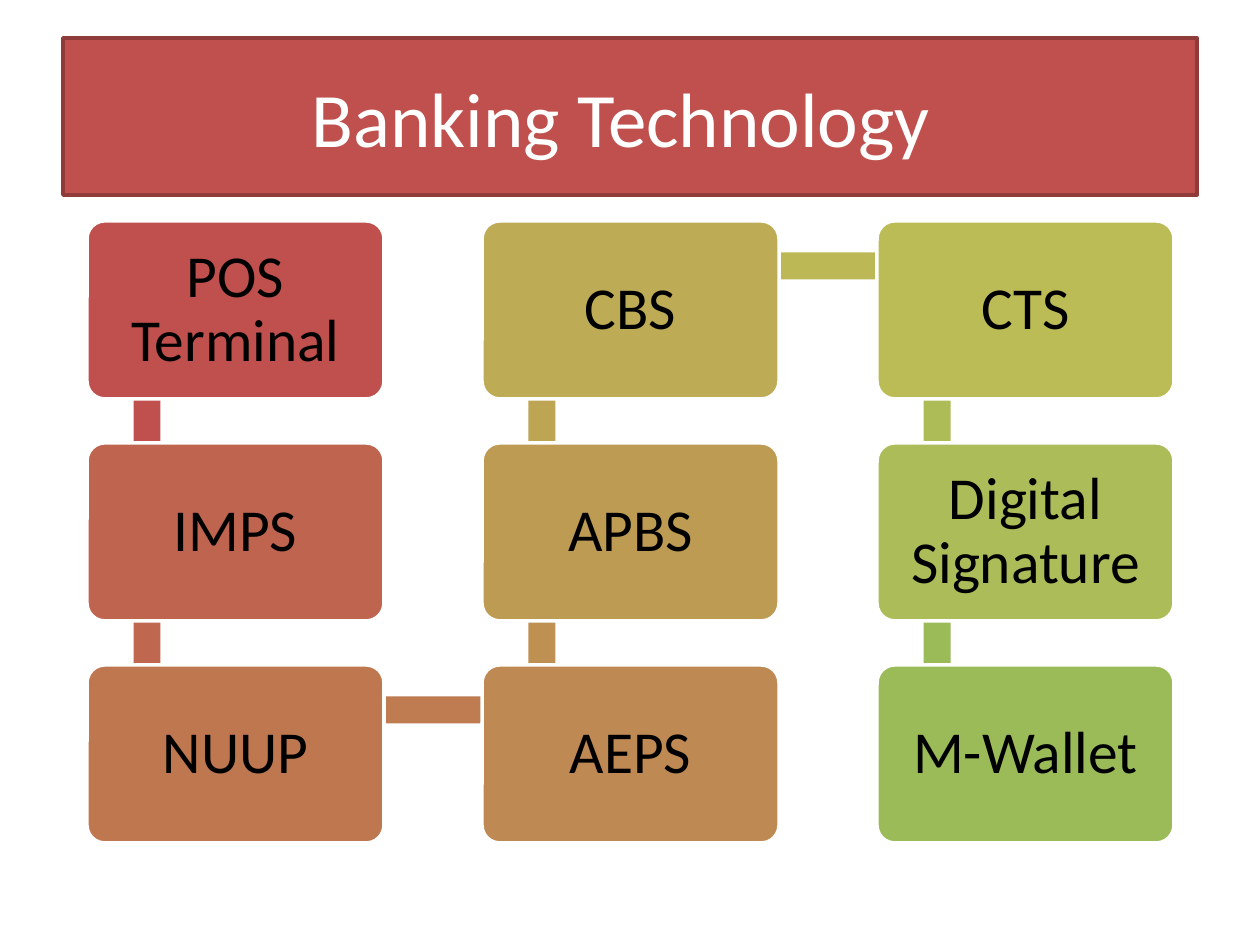
import math

import pptx
import pptx.dml.color
import pptx.enum.shapes
import pptx.enum.text
import pptx.util

EMU_PER_PX = 914400 / 126
FONT = "Calibri"
CARD_LEFT, CARD_TOP = 87, 221
CARD_WIDTH, CARD_HEIGHT = 297, 178
COLUMN_STEP, ROW_STEP = 395, 222
ANCHOR_X, ANCHOR_Y = 60, 45
LINK_THICKNESS = 27
CARD_MARGIN = 18

CARDS = [
    ("POS Terminal", 0, 0, "C0504D", "C0504D"),
    ("IMPS", 0, 1, "BF644F", "BF674F"),
    ("NUUP", 0, 2, "BF7750", "BF7C50"),
    ("AEPS", 1, 2, "BE8952", "BE9152"),
    ("APBS", 1, 1, "BD9B53", "BDA554"),
    ("CBS", 1, 0, "BDAC55", "BCB856"),
    ("CTS", 2, 0, "BCBC56", "AEBC57"),
    ("Digital Signature", 2, 1, "ABBC58", "9BBB59"),
    ("M-Wallet", 2, 2, "9BBB59", None),
]


def px(value):
    return pptx.util.Emu(round(value * EMU_PER_PX))


def color(value):
    return pptx.dml.color.RGBColor.from_string(value)


def add_box(slide, kind, left, top, width, height, fill, line=None):
    shape = slide.shapes.add_shape(kind, px(left), px(top), px(width), px(height))
    shape.shadow.inherit = False
    shape.fill.solid()
    shape.fill.fore_color.rgb = color(fill)
    if line:
        shape.line.color.rgb = color(line)
        shape.line.width = pptx.util.Pt(2)
    else:
        shape.line.fill.background()
    return shape


def write_text(shape, text, size, text_color, spacing=1.0):
    frame = shape.text_frame
    frame.word_wrap = True
    frame.vertical_anchor = pptx.enum.text.MSO_ANCHOR.MIDDLE
    paragraph = frame.paragraphs[0]
    paragraph.alignment = pptx.enum.text.PP_ALIGN.CENTER
    paragraph.line_spacing = spacing
    run = paragraph.add_run()
    run.text = text
    run.font.name = FONT
    run.font.size = pptx.util.Pt(size)
    run.font.color.rgb = color(text_color)


def add_title(slide):
    kind = pptx.enum.shapes.MSO_SHAPE.RECTANGLE
    title = add_box(slide, kind, 63, 38, 1134, 157, "C0504D", "8E3B39")
    write_text(title, "Banking Technology ", 44, "FFFFFF")


def card_position(column, row):
    return CARD_LEFT + column * COLUMN_STEP, CARD_TOP + row * ROW_STEP


def add_link(slide, start, end, fill):
    length = math.dist(start, end)
    center_x = (start[0] + end[0]) / 2 + ANCHOR_X
    center_y = (start[1] + end[1]) / 2 + ANCHOR_Y
    link = add_box(
        slide, pptx.enum.shapes.MSO_SHAPE.RECTANGLE,
        center_x - length / 2, center_y - LINK_THICKNESS / 2,
        length, LINK_THICKNESS, fill,
    )
    link.rotation = math.degrees(math.atan2(end[1] - start[1], end[0] - start[0])) % 360


def add_card(slide, text, position, fill):
    kind = pptx.enum.shapes.MSO_SHAPE.ROUNDED_RECTANGLE
    card = add_box(slide, kind, *position, CARD_WIDTH, CARD_HEIGHT, fill, "FFFFFF")
    card.adjustments[0] = 0.1
    frame = card.text_frame
    frame.margin_left = frame.margin_right = px(CARD_MARGIN)
    frame.margin_top = frame.margin_bottom = px(CARD_MARGIN)
    write_text(card, text, 34, "000000", 0.9)


def add_process(slide):
    positions = [card_position(column, row) for _, column, row, _, _ in CARDS]
    for index, (text, _, _, fill, link_fill) in enumerate(CARDS):
        if link_fill:
            add_link(slide, positions[index], positions[index + 1], link_fill)
        add_card(slide, text, positions[index], fill)


def main():
    presentation = pptx.Presentation()
    presentation.slide_width = px(1260)
    presentation.slide_height = px(945)
    slide = presentation.slides.add_slide(presentation.slide_layouts[6])
    add_title(slide)
    add_process(slide)
    presentation.save("out.pptx")


if __name__ == "__main__":
    main()
